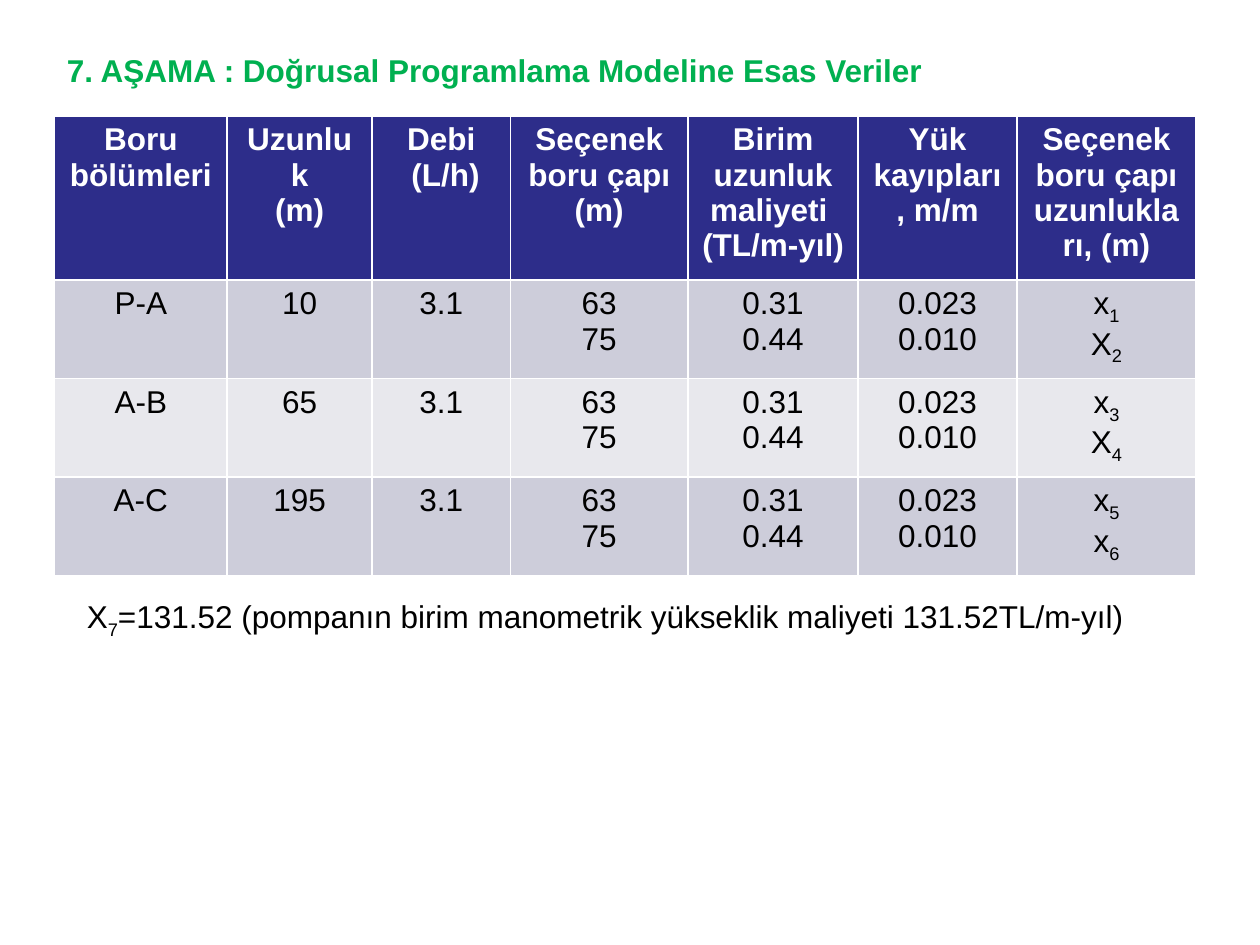
from pptx import Presentation as Deck
from pptx.dml.color import RGBColor as Rgb
from pptx.enum.text import PP_ALIGN as Align
from pptx.util import Cm, Pt

INK = {"title": "00B050", "head": "2D2D8A", "odd": "CDCDDA",
       "even": "E8E8ED", "white": "FFFFFF", "text": "000000"}
WIDTHS = [3.48, 2.92, 2.79, 3.58, 3.43, 3.2, 3.61]
HEADS = ["Boru bölümleri", "Uzunluk\n(m)", "Debi\n (L/h)",
         "Seçenek boru çapı (m)", "Birim uzunluk maliyeti \n(TL/m-yıl)",
         "Yük kayıpları, m/m", "Seçenek boru çapı uzunlukları, (m)"]
PIPES = [("P-A", "10", "x_1_\nX_2_"), ("A-B", "65", "x_3_\nX_4_"),
         ("A-C", "195", "x_5_\nx_6_")]
SHARED = ["3.1", "63\n75", "0.31\n0.44", "0.023\n0.010"]


def write(frame, text, ink, bold=False, align=Align.LEFT):
    """Write lines of text, with subscripts between underscores."""
    frame.word_wrap = True
    for row, line in enumerate(text.split("\n")):
        para = frame.add_paragraph() if row else frame.paragraphs[0]
        para.alignment = align
        font = para.font
        font.name, font.size, font.bold = "Arial", Pt(18), bold
        font.color.rgb = Rgb.from_string(INK[ink])
        for spot, part in enumerate(line.split("_")):
            if part:
                run = para.add_run()
                run.text = part
                if spot % 2:
                    run._r.get_or_add_rPr().set("baseline", "-25000")


def add_text(slide, box, text, ink, bold=False):
    """Add a text box at the given left, top, width and height."""
    shape = slide.shapes.add_textbox(*map(Cm, box))
    write(shape.text_frame, text, ink, bold)


def add_grid(slide):
    """Add the table of pipe sections and their options."""
    rows = [HEADS] + [[name, size, *SHARED, var] for name, size, var in PIPES]
    grid = slide.shapes.add_table(len(rows), len(WIDTHS), Cm(1.1), Cm(2.34),
                                  Cm(sum(WIDTHS)), Cm(9.22)).table
    for col, width in zip(grid.columns, WIDTHS):
        col.width = Cm(width)
    for i, row in enumerate(rows):
        head = i == 0
        grid.rows[i].height = Cm(3.28 if head else 1.98)
        fill = "head" if head else ("odd" if i % 2 else "even")
        for j, text in enumerate(row):
            cell = grid.cell(i, j)
            cell.fill.solid()
            cell.fill.fore_color.rgb = Rgb.from_string(INK[fill])
            write(cell.text_frame, text, "white" if head else "text",
                  head, Align.CENTER)


def main():
    """Build the slide and save it."""
    deck = Deck()
    deck.slide_width, deck.slide_height = Cm(25.4), Cm(19.05)
    slide = deck.slides.add_slide(deck.slide_layouts[6])
    add_text(slide, (1.1, 0.91, 19.6, 9.5),
             "7. AŞAMA : Doğrusal Programlama Modeline Esas Veriler",
             "title", True)
    add_grid(slide)
    add_text(slide, (1.5, 11.91, 21.6, 1.02),
             "X_7_=131.52 (pompanın birim manometrik yükseklik maliyeti "
             "131.52TL/m-yıl)", "text")
    deck.save("out.pptx")


if __name__ == "__main__":
    main()
